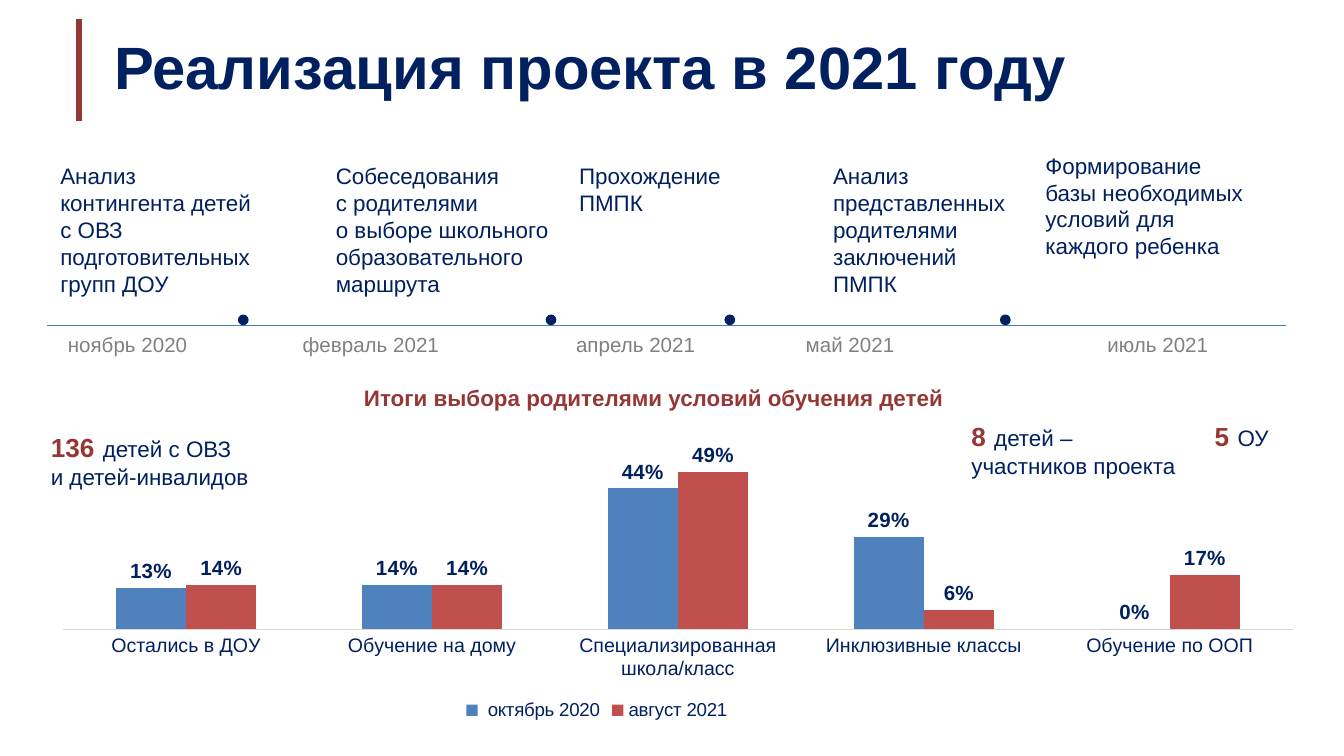
import pptx
import pptx.util
import pptx.chart.data
import pptx.dml.color
import pptx.enum.chart
import pptx.enum.shapes
import pptx.enum.text
import pptx.oxml

COLORS = {
    "navy": "002060", "brick": "953735", "gray": "808080", "axis": "4B7EBC",
    "rule": "D9D9D9", "october": "4F81BD", "august": "C0504D",
}
FONT = "Arial"
WIDTH = pptx.util.Inches(10)
HEIGHT = WIDTH * 9 // 16
COL, ROW = WIDTH / 100, HEIGHT / 56.25
LEFT, CENTER = pptx.enum.text.PP_ALIGN.LEFT, pptx.enum.text.PP_ALIGN.CENTER


def rgb(name):
    return pptx.dml.color.RGBColor.from_string(COLORS[name])


def place(x, y, w, h):
    return round(x * COL), round(y * ROW), round(w * COL), round(h * ROW)


def style(font, size, color, bold=False):
    font.name, font.size, font.bold = FONT, pptx.util.Pt(size), bold
    font.color.rgb = rgb(color)


def add_text(s, box, paragraphs, align=LEFT, wrap=True):
    tf = s.shapes.add_textbox(*place(*box)).text_frame
    tf.word_wrap = wrap
    for i, runs in enumerate(paragraphs):
        p = tf.paragraphs[0] if i == 0 else tf.add_paragraph()
        p.alignment = align
        for text, size, color, bold in runs:
            r = p.add_run()
            r.text = text
            style(r.font, size, color, bold)
    return tf


def add_line(s, x1, y1, x2, y2, color, width):
    x1, y1, x2, y2 = place(x1, y1, x2, y2)
    line = s.shapes.add_connector(pptx.enum.shapes.MSO_CONNECTOR.STRAIGHT, x1, y1, x2, y2)
    line.line.color.rgb = rgb(color)
    line.line.width = pptx.util.Pt(width)
    line._element.spPr.append(pptx.oxml.parse_xml(
        '<a:effectLst xmlns:a="http://schemas.openxmlformats.org/drawingml/2006/main"/>'))


def set_layout(parent, index, **shares):
    for old in parent.findall(pptx.oxml.ns.qn("c:layout")):
        parent.remove(old)
    target = '<c:layoutTarget val="inner"/>' if "h" in shares else ""
    modes = "".join(f'<c:{k}Mode val="edge"/>' for k in "xy")
    values = "".join(f'<c:{k} val="{v}"/>' for k, v in shares.items())
    parent.insert(index, pptx.oxml.parse_xml(
        '<c:layout xmlns:c="http://schemas.openxmlformats.org/drawingml/2006/chart">'
        f"<c:manualLayout>{target}{modes}{values}</c:manualLayout></c:layout>"))


def title_block(s, x, y, w, h):
    tf = add_text(s, (x + 1.6, y + 0.7, w - 1.6, 5.5),
                  [[("Реализация проекта в 2021 году", 32, "navy", True)]])
    tf.vertical_anchor = pptx.enum.text.MSO_ANCHOR.MIDDLE
    add_line(s, x, y, x, y + h, "brick", 3)


def timeline(s, x, y, w, h):
    steps = [
        (0, 0.8, 16.5, 11.1, ["Анализ контингента детей с ОВЗ подготовительных групп ДОУ"]),
        (20.5, 0.8, 18.9, 11.1, ["Собеседования", "с родителями",
                                 "о выборе школьного образовательного маршрута"]),
        (38.6, 0.8, 13.1, 5, ["Прохождение", "ПМПК"]),
        (57.5, 0.8, 15.6, 11.1, ["Анализ представленных родителями заключений ПМПК"]),
        (73.3, 0, 17.1, 9.1, ["Формирование базы необходимых условий для каждого ребенка"]),
    ]
    months = [
        (-1.5, 15, "ноябрь 2020"), (16.6, 15, "февраль 2021"), (36.3, 15, "апрель 2021"),
        (51.2, 17.1, "май 2021"), (74.1, 17.1, "июль 2021"),
    ]
    axis = y + h - 2.9
    for dx, dy, tw, th, lines in steps:
        add_text(s, (x + dx, y + dy, tw, th),
                 [[(line, 12, "navy", False)] for line in lines], wrap=len(lines) != 2)
    add_line(s, x, axis, x + w, axis, "axis", 0.75)
    for dx in (14.2, 37.1, 50.4, 70.9):
        sp = s.shapes.add_shape(pptx.enum.shapes.MSO_SHAPE.OVAL,
                                *place(x + dx, axis - 0.8, 0.8, 0.8))
        sp.shadow.inherit = False
        sp.fill.solid()
        sp.fill.fore_color.rgb = rgb("navy")
        sp.line.fill.background()
    for dx, tw, month in months:
        add_text(s, (x + dx, axis, tw, 2.9), [[(month, 11, "gray", False)]], CENTER)


def results_chart(s, x, y, w, h):
    data = pptx.chart.data.CategoryChartData(number_format="0%")
    data.categories = ["Остались в ДОУ", "Обучение на дому", "Специализированная школа/класс",
                       "Инклюзивные классы", "Обучение по ООП"]
    data.add_series(" октябрь 2020", (0.13, 0.14, 0.44, 0.29, 0))
    data.add_series("август 2021", (0.14, 0.14, 0.49, 0.06, 0.17))
    chart = s.shapes.add_chart(pptx.enum.chart.XL_CHART_TYPE.COLUMN_CLUSTERED,
                               *place(x, y, w, h), data).chart
    style(chart.font, 10, "navy")
    chart.has_title = False
    chart.has_legend = True
    chart.legend.position = pptx.enum.chart.XL_LEGEND_POSITION.BOTTOM
    chart.legend.include_in_layout = False
    style(chart.legend.font, 10, "navy")

    plot = chart.plots[0]
    plot.gap_width, plot.overlap, plot.vary_by_categories = 150, 0, False
    for series, color in zip(plot.series, ("october", "august")):
        series.format.fill.solid()
        series.format.fill.fore_color.rgb = rgb(color)
        labels = series.data_labels
        labels.show_value = True
        labels.number_format, labels.number_format_is_linked = "0%", False
        labels.position = pptx.enum.chart.XL_LABEL_POSITION.OUTSIDE_END
        style(labels.font, 11, "navy", True)

    values, categories = chart.value_axis, chart.category_axis
    values.visible = values.has_major_gridlines = False
    values.minimum_scale, values.maximum_scale = 0, 0.6
    categories.major_tick_mark = pptx.enum.chart.XL_TICK_MARK.NONE
    categories.format.line.color.rgb = rgb("rule")
    categories.format.line.width = pptx.util.Pt(0.75)
    style(categories.tick_labels.font, 10.5, "navy")

    set_layout(chart._chartSpace.chart.plotArea, 0, x=0.02, y=0.02, w=0.96, h=0.65)
    set_layout(chart.legend._element, 1, x=0.33, y=0.89)


def results(s, x, y, w, h):
    results_chart(s, x, y + 4, w, h - 4)
    add_text(s, (x + 5.5, y, 80.7, 3),
             [[("Итоги выбора родителями условий обучения детей", 12, "brick", True)]], CENTER)
    facts = [
        (0, 3.2, 5.7, "136", ["детей с ОВЗ", "и детей-инвалидов"]),
        (68.5, 2.4, 5.7, "8", ["детей – участников проекта"]),
        (86.6, 2.4, 3.7, "5", ["ОУ"]),
    ]
    for dx, dy, th, number, (first, *rest) in facts:
        lead = [(number, 14, "brick", True), (" ", 16, "brick", False), (first, 12, "navy", False)]
        add_text(s, (x + dx, y + dy, 17.3, th),
                 [lead] + [[(line, 12, "navy", False)] for line in rest])


def main():
    prs = pptx.Presentation()
    prs.slide_width, prs.slide_height = WIDTH, HEIGHT
    s = prs.slides.add_slide(prs.slide_layouts[6])
    title_block(s, 5.9, 1.4, 78.8, 7.6)
    timeline(s, 3.5, 10.8, 92.2, 16.3)
    results(s, 2.8, 28.1, 95.3, 26)
    prs.save("out.pptx")


if __name__ == "__main__":
    main()
